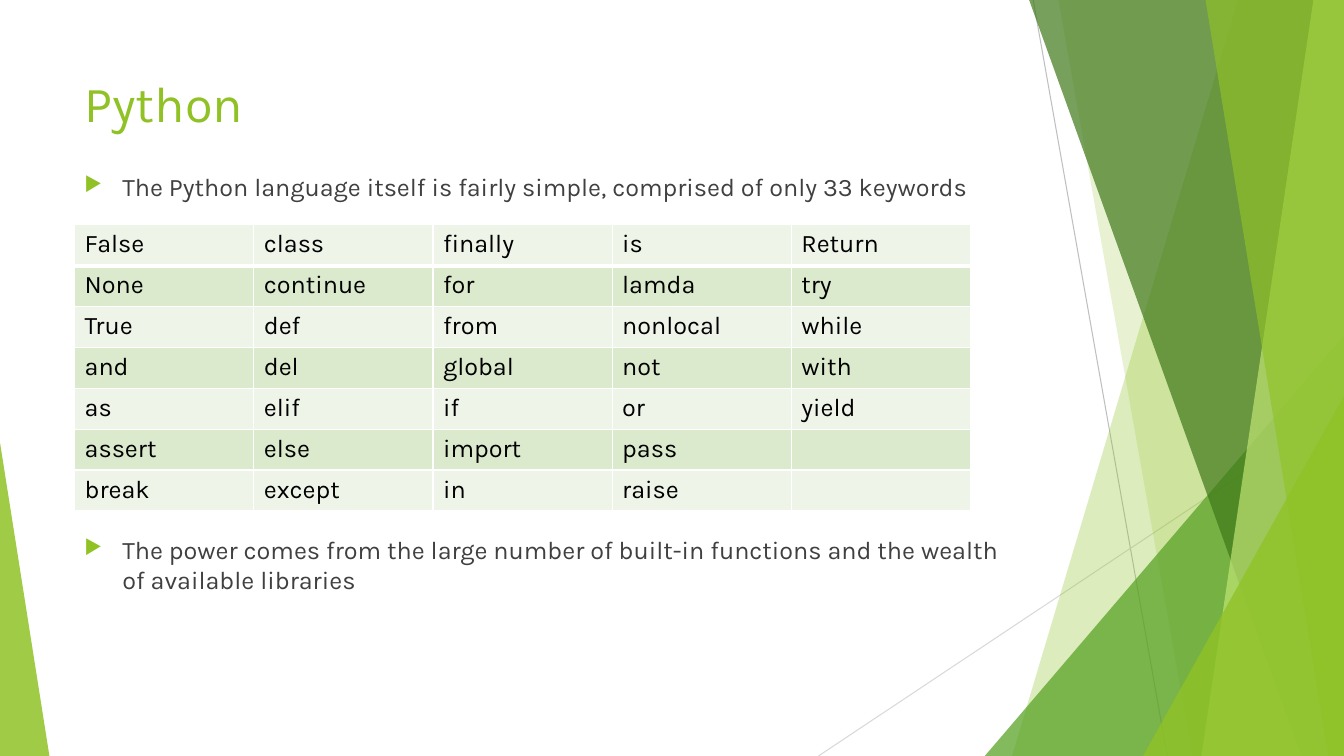
from dataclasses import dataclass

import pptx
import pptx.dml.color
import pptx.enum.shapes
import pptx.enum.text
import pptx.oxml
import pptx.oxml.ns
import pptx.util

Pt = pptx.util.Pt
qn = pptx.oxml.ns.qn
NS = 'xmlns:a="http://schemas.openxmlformats.org/drawingml/2006/main"'

WIDE, HIGH = 960, 540
FONT = "Karla"
GREEN, GRAY, BLACK, WHITE = "90C226", "404040", "000000", "FFFFFF"
ROW_FILLS = ("EEF4E8", "DBE9CD")
LEFT, TEXT_WIDE = 53.28, 676.8
COL_WIDE, ROW_HIGH = 128, 29.2

KEYWORDS = (
    ("False", "class", "finally", "is", "Return"),
    ("None", "continue", "for", "lamda", "try"),
    ("True", "def", "from", "nonlocal", "while"),
    ("and", "del", "global", "not", "with"),
    ("as", "elif", "if", "or", "yield"),
    ("assert", "else", "import", "pass", ""),
    ("break", "except", "in", "raise", ""),
)


@dataclass
class Ray:
    start: tuple[float, float]
    end: tuple[float, float]
    color: str


@dataclass
class Band:
    """A full-height facet reaching from a slanted left side to the slide's right edge."""
    top: float
    foot: float
    color: str
    alpha: int


@dataclass
class Wedge:
    """A right triangle standing on the slide's bottom edge."""
    left: float
    top: float
    wide: float
    peak: float
    color: str
    alpha: int


@dataclass
class Bullet:
    top: float
    high: float
    text: str


RAYS = (
    Ray((738, 0), (833.76, HIGH), "BFBFBF"),
    Ray((WIDE, 290.16), (584.64, HIGH), "D9D9D9"),
)
FACETS = (
    Band(884.16, 722.88, GREEN, 30),
    Band(756, 851.76, GREEN, 20),
    Wedge(703.44, 239.76, 256.56, 1, "54A021", 72),
    Band(735.12, 929.52, "3F7819", 70),
    Band(938.16, 858.24, "C0E474", 70),
    Band(861.12, 948.96, GREEN, 65),
    Wedge(816.48, 282.96, 143.52, 1, GREEN, 80),
    Wedge(0, 316.08, 35.28, 0, GREEN, 85),
)
BULLETS = (
    Bullet(118.8, 33.12, "The Python language itself is fairly simple, "
           "comprised of only 33 keywords"),
    Bullet(378, 69.84, "The power comes from the large number of built-in "
           "functions and the wealth of available libraries"),
)


def rgb(color: str) -> pptx.dml.color.RGBColor:
    return pptx.dml.color.RGBColor.from_string(color)


def add_run(para, text: str, size: float, color: str) -> None:
    run = para.add_run()
    run.text = text
    run.font.name = FONT
    run.font.size = Pt(size)
    run.font.color.rgb = rgb(color)


def draw_ray(shapes, ray: Ray) -> None:
    line = shapes.add_connector(
        pptx.enum.shapes.MSO_CONNECTOR.STRAIGHT,
        *map(Pt, ray.start), *map(Pt, ray.end))
    line.line.color.rgb = rgb(ray.color)
    line.line.width = Pt(0.75)
    props = line.element.find(qn("p:spPr"))
    props.append(pptx.oxml.parse_xml(f"<a:effectLst {NS}/>"))


def draw_facet(shapes, facet: Band | Wedge) -> None:
    if isinstance(facet, Band):
        path = shapes.build_freeform(Pt(facet.top), 0, scale=1)
        path.add_line_segments([
            (Pt(WIDE), 0), (Pt(WIDE), Pt(HIGH)), (Pt(facet.foot), Pt(HIGH))])
        shape = path.convert_to_shape()
    else:
        shape = shapes.add_shape(
            pptx.enum.shapes.MSO_SHAPE.ISOSCELES_TRIANGLE,
            Pt(facet.left), Pt(facet.top), Pt(facet.wide), Pt(HIGH - facet.top))
        shape.adjustments[0] = facet.peak
    shape.shadow.inherit = False
    shape.fill.solid()
    shape.fill.fore_color.rgb = rgb(facet.color)
    tint = shape.element.find(".//" + qn("a:srgbClr"))
    tint.append(pptx.oxml.parse_xml(f'<a:alpha {NS} val="{facet.alpha * 1000}"/>'))
    shape.line.fill.background()


def write_title(title, text: str) -> None:
    title.left, title.top = Pt(LEFT), Pt(48.24)
    title.width, title.height = Pt(TEXT_WIDE), Pt(103.68)
    frame = title.text_frame
    frame.auto_size = pptx.enum.text.MSO_AUTO_SIZE.NONE
    frame.vertical_anchor = pptx.enum.text.MSO_ANCHOR.TOP
    para = frame.paragraphs[0]
    para.alignment = pptx.enum.text.PP_ALIGN.LEFT
    add_run(para, text, 36, GREEN)


def draw_bullet(shapes, item: Bullet) -> None:
    box = shapes.add_textbox(Pt(LEFT), Pt(item.top), Pt(TEXT_WIDE), Pt(item.high))
    box.text_frame.word_wrap = True
    para = box.text_frame.paragraphs[0]
    para.space_before = Pt(10)
    add_run(para, item.text, 18, GRAY)
    props = para._p.get_or_add_pPr()
    props.set("marL", str(Pt(27)))
    props.set("indent", str(Pt(-27)))
    for mark in (f'<a:buClr {NS}><a:srgbClr val="{GREEN}"/></a:buClr>',
                 f'<a:buSzPct {NS} val="80000"/>',
                 f'<a:buChar {NS} char="▶"/>'):
        props.append(pptx.oxml.parse_xml(mark))


def set_border(cell, side: str, width: float) -> None:
    cell._tc.get_or_add_tcPr().append(pptx.oxml.parse_xml(
        f'<a:{side} {NS} w="{Pt(width)}"><a:solidFill><a:srgbClr val="{WHITE}"/>'
        f'</a:solidFill></a:{side}>'))


def draw_table(shapes, words: tuple[tuple[str, ...], ...]) -> None:
    rows, cols = len(words), len(words[0])
    table = shapes.add_table(
        rows, cols, Pt(LEFT), Pt(160.56),
        Pt(cols * COL_WIDE), Pt(rows * ROW_HIGH)).table
    table.first_row = table.horz_banding = False
    for col in table.columns:
        col.width = Pt(COL_WIDE)
    for r, line in enumerate(words):
        table.rows[r].height = Pt(ROW_HIGH)
        for c, word in enumerate(line):
            cell = table.cell(r, c)
            if word:
                add_run(cell.text_frame.paragraphs[0], word, 18, BLACK)
            set_border(cell, "lnL", 1)
            set_border(cell, "lnR", 1)
            set_border(cell, "lnT", 3 if r == 1 else 1)
            set_border(cell, "lnB", 3 if r == 0 else 1)
            cell.fill.solid()
            cell.fill.fore_color.rgb = rgb(ROW_FILLS[r % 2])


def main() -> None:
    deck = pptx.Presentation()
    deck.slide_width, deck.slide_height = Pt(WIDE), Pt(HIGH)
    slide = deck.slides.add_slide(deck.slide_layouts.get_by_name("Title Only"))
    shapes = slide.shapes
    for ray in RAYS:
        draw_ray(shapes, ray)
    for facet in FACETS:
        draw_facet(shapes, facet)
    write_title(shapes.title, "Python")
    draw_table(shapes, KEYWORDS)
    for item in BULLETS:
        draw_bullet(shapes, item)
    deck.save("out.pptx")


if __name__ == "__main__":
    main()
